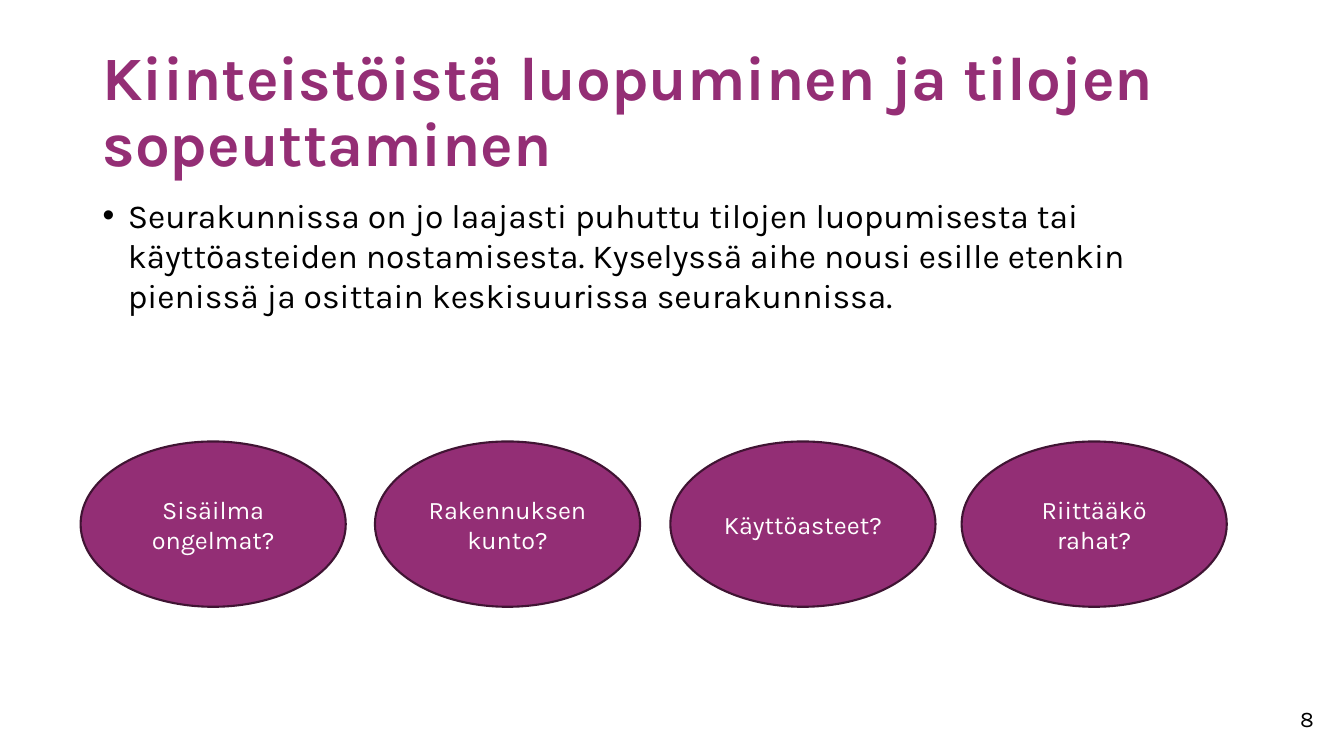
"""Build a slide on giving up properties, with four questions in ellipses."""
from dataclasses import dataclass

from lxml.etree import SubElement
from pptx import Presentation
from pptx.dml.color import RGBColor as Rgb
from pptx.enum.shapes import MSO_SHAPE as Kind
from pptx.enum.text import MSO_ANCHOR as Anchor, PP_ALIGN as Align
from pptx.oxml.ns import qn
from pptx.util import Inches, Pt

WIDE, HIGH = Inches(13.33), Inches(7.5)
FONT = "Karla"
PLUM, EDGE, BLACK, WHITE = "932E75", "401433", "000000", "FFFFFF"


@dataclass(frozen=True)
class Box:
    left: float
    top: float
    width: float
    height: float

    def place(self) -> tuple[int, int, int, int]:
        return (int(WIDE * self.left / 100), int(HIGH * self.top / 100),
                int(WIDE * self.width / 100), int(HIGH * self.height / 100))


@dataclass(frozen=True)
class Topic:
    text: str
    left: float


TITLE = Box(6.9, 5.33, 86.27, 19.33)
BODY = Box(6.9, 25.07, 82.75, 29.2)
PAGE = Box(90.1, 92.67, 8.4, 4.93)
TOPICS = (
    Topic("Sisäilma ongelmat?", 6),
    Topic("Rakennuksen kunto?", 27.9),
    Topic("Käyttöasteet?", 49.88),
    Topic("Riittääkö rahat?", 71.55),
)


def color(code: str) -> Rgb:
    return Rgb.from_string(code)


def write(shape, text: str, *, size: float, ink: str = BLACK, bold: bool = False,
          align: Align = Align.LEFT, anchor: Anchor = Anchor.TOP,
          space: float = 1, bullet: bool = False) -> None:
    frame = shape.text_frame
    frame.word_wrap = True
    frame.vertical_anchor = anchor
    para = frame.paragraphs[0]
    para.text = text
    para.alignment = align
    para.line_spacing = space
    if bullet:
        props = para._p.get_or_add_pPr()
        props.set("marL", str(Inches(0.25)))
        props.set("indent", str(-Inches(0.25)))
        SubElement(props, qn("a:buFont")).set("typeface", "Arial")
        SubElement(props, qn("a:buChar")).set("char", "•")
    font = para.runs[0].font
    font.name, font.size, font.bold = FONT, Pt(size), bold
    font.color.rgb = color(ink)


def label(slide, box: Box, text: str, **style) -> None:
    write(slide.shapes.add_textbox(*box.place()), text, **style)


def bubble(slide, topic: Topic) -> None:
    box = Box(topic.left, 58.4, 19.73, 21.87)
    shape = slide.shapes.add_shape(Kind.OVAL, *box.place())
    shape.shadow.inherit = False
    shape.fill.solid()
    shape.fill.fore_color.rgb = color(PLUM)
    shape.line.color.rgb = color(EDGE)
    shape.line.width = Pt(1.5)
    write(shape, topic.text, size=18, ink=WHITE, align=Align.CENTER,
          anchor=Anchor.MIDDLE)


def main() -> None:
    deck = Presentation()
    deck.slide_width, deck.slide_height = WIDE, HIGH
    slide = deck.slides.add_slide(deck.slide_layouts[6])
    label(slide, TITLE, "Kiinteistöistä luopuminen ja tilojen sopeuttaminen",
          size=44, ink="942E75", bold=True, anchor=Anchor.MIDDLE, space=0.9)
    label(slide, BODY,
          "Seurakunnissa on jo laajasti puhuttu tilojen luopumisesta tai "
          "käyttöasteiden nostamisesta. Kyselyssä aihe nousi esille etenkin "
          "pienissä ja osittain keskisuurissa seurakunnissa.",
          size=24, bullet=True)
    for topic in TOPICS:
        bubble(slide, topic)
    label(slide, PAGE, "8", size=16, align=Align.RIGHT)
    deck.save("out.pptx")


if __name__ == "__main__":
    main()
